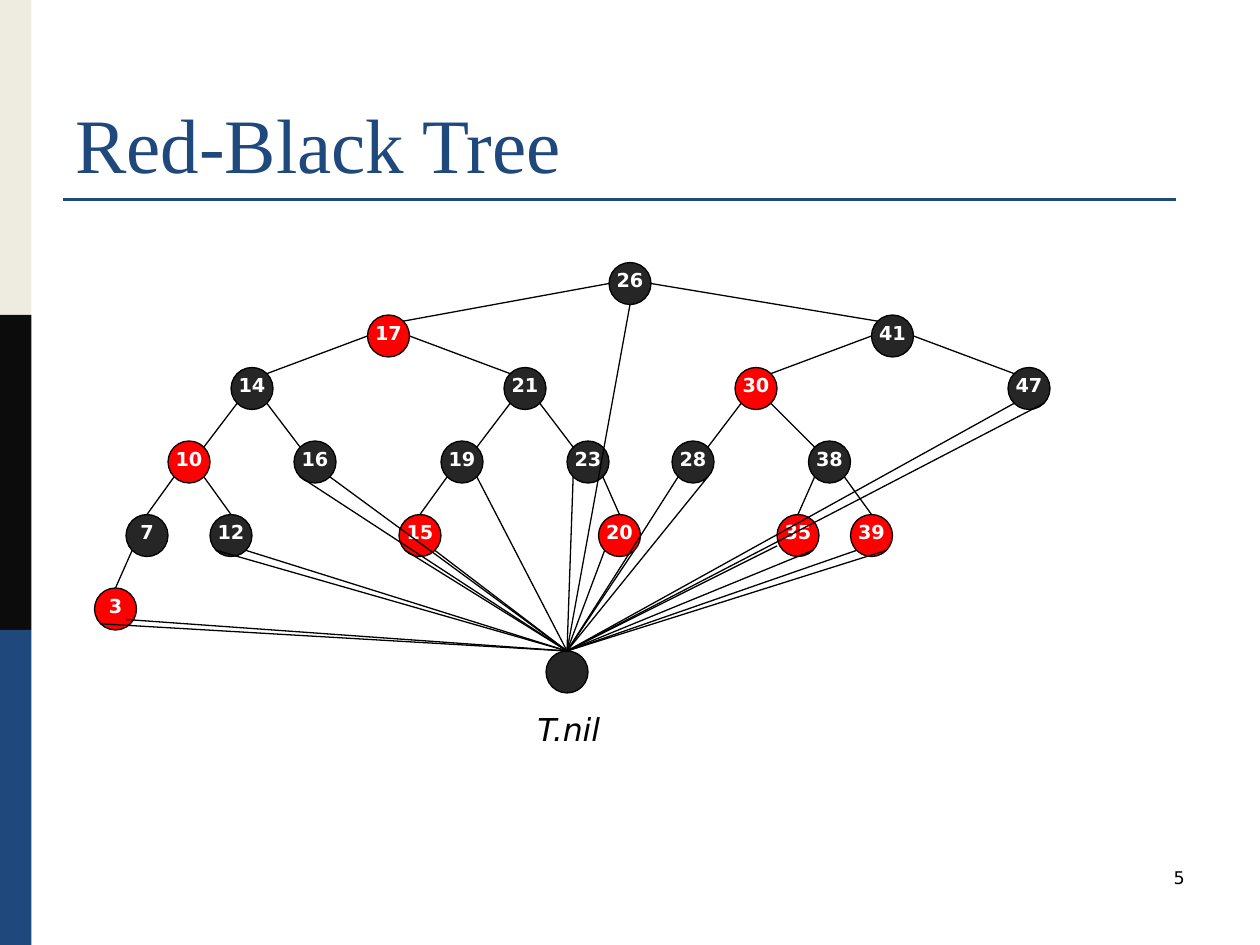
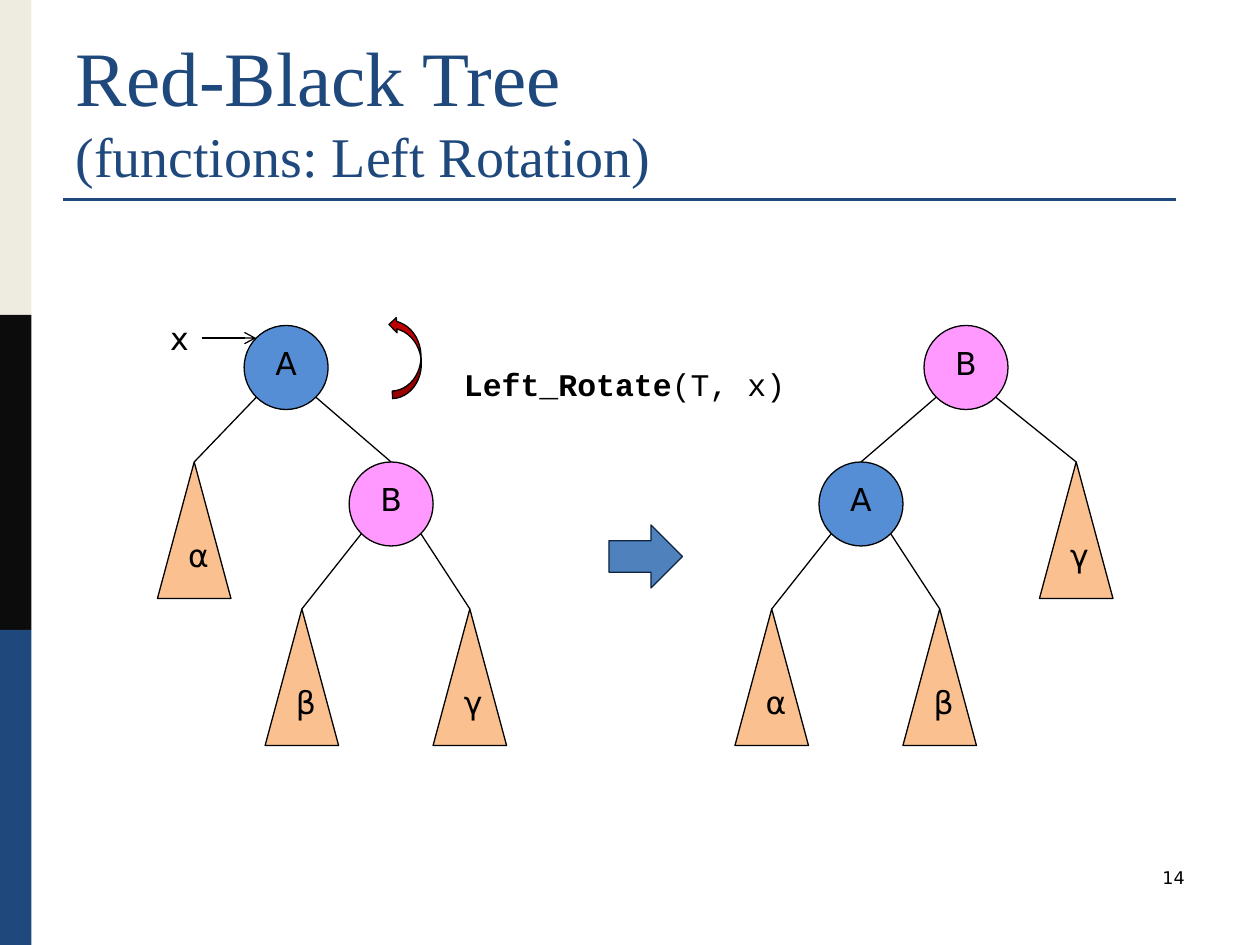
from dataclasses import dataclass

from lxml import etree
from pptx import Presentation
from pptx import util as u
from pptx.dml.color import RGBColor
from pptx.enum import shapes, text
from pptx.oxml.ns import qn

COLUMNS, ROWS = 120, 90
DIAGONAL = 0.707


@dataclass(frozen=True)
class Theme:
    """Colours, fonts and type sizes shared by the slides."""
    navy: str = "1F497D"
    cream: str = "EEECE1"
    ink: str = "0C0C0C"
    black: str = "000000"
    white: str = "FFFFFF"
    node_black: str = "262626"
    node_red: str = "FF0000"
    blue: str = "558ED5"
    pink: str = "FF99FF"
    peach: str = "FAC090"
    arrow: str = "4F81BD"
    arrow_edge: str = "0F243E"
    crimson: str = "C00000"
    serif: str = "Times New Roman"
    sans: str = "DejaVu Sans"
    mono: str = "Courier New"
    title: int = 44
    subtitle: int = 32
    body: int = 18
    key: int = 11
    page: int = 10
    thin: float = 0.75
    rule: float = 1.5


class Deck:
    """Draws styled elements on the current slide, measured in grid columns and rows."""

    def __init__(self, theme):
        self.theme = theme
        self.show = Presentation()
        self.show.slide_width, self.show.slide_height = u.Inches(10), u.Inches(7.5)
        self.slide = None

    def at(self, *lengths):
        """Turn alternating columns and rows into slide lengths."""
        units = self.show.slide_width / COLUMNS, self.show.slide_height / ROWS
        return [round(n * units[i % 2]) for i, n in enumerate(lengths)]

    def page(self, number, *headings):
        """Start a slide with its bands, rule, title and page number."""
        t = self.theme
        self.slide = self.show.slides.add_slide(self.show.slide_layouts[6])
        for band, color in enumerate((t.cream, t.ink, t.navy)):
            self.shape("RECTANGLE", (0, band * ROWS / 3, 3, ROWS / 3), color)
        self.line((6, 19), (112, 19), t.navy, t.rule)
        title = self.label((6, 3.6, 108, 15), headings[0], t.title, t.navy, t.serif)
        title.vertical_anchor = text.MSO_ANCHOR.BOTTOM
        for heading in headings[1:]:
            paragraph = title.add_paragraph()
            paragraph.text = heading
            self.style(paragraph, t.subtitle, t.navy, t.serif)
        self.label((86, 82, 28, 6), number, t.page, align="RIGHT")

    def style(self, paragraph, size, color=None, font=None, align="LEFT"):
        """Set the type of a whole paragraph."""
        paragraph.font.size = u.Pt(size)
        paragraph.font.name = font or self.theme.sans
        paragraph.font.color.rgb = RGBColor.from_string(color or self.theme.black)
        paragraph.alignment = getattr(text.PP_ALIGN, align)

    def label(self, box, words, size, color=None, font=None, align="LEFT", wrap=True):
        """Add free text and return its frame."""
        frame = self.slide.shapes.add_textbox(*self.at(*box)).text_frame
        frame.word_wrap = wrap
        frame.text = words
        self.style(frame.paragraphs[0], size, color, font, align)
        return frame

    def shape(self, preset, box, fill, edge=None):
        """Add a flat preset shape."""
        figure = self.slide.shapes.add_shape(getattr(shapes.MSO_SHAPE, preset), *self.at(*box))
        figure.shadow.inherit = False
        figure.fill.solid()
        figure.fill.fore_color.rgb = RGBColor.from_string(fill)
        if edge:
            figure.line.color.rgb = RGBColor.from_string(edge)
            figure.line.width = u.Pt(self.theme.thin)
        else:
            figure.line.fill.background()
        return figure

    def line(self, start, end, color=None, width=None, arrow=False):
        """Join two grid points."""
        edge = self.slide.shapes.add_connector(
            shapes.MSO_CONNECTOR.STRAIGHT, *self.at(*start, *end))
        edge.line.color.rgb = RGBColor.from_string(color or self.theme.black)
        edge.line.width = u.Pt(width or self.theme.thin)
        properties = edge._element.spPr
        if arrow:
            etree.SubElement(properties.find(qn("a:ln")), qn("a:tailEnd"), type="arrow")
        etree.SubElement(properties, qn("a:effectLst"))

    def inscribe(self, figure, words, size, color=None, align="CENTER"):
        """Write words at the top of a shape's text area."""
        frame = figure.text_frame
        frame.vertical_anchor = text.MSO_ANCHOR.TOP
        frame.text = words
        self.style(frame.paragraphs[0], size, color, align=align)
        return frame

    def key_node(self, center, key, red):
        """Add a numbered red or black node."""
        t = self.theme
        circle = self.shape("OVAL", (center[0] - 2, center[1] - 2, 4, 4),
                            t.node_red if red else t.node_black, t.black)
        if key:
            frame = self.inscribe(circle, key, t.key, t.white)
            frame.margin_left = frame.margin_right = 0
            frame.margin_top = frame.margin_bottom = 0
            frame.paragraphs[0].font.bold = True

    def pivot(self, center, name):
        """Add a large rotation node."""
        t = self.theme
        circle = self.shape("OVAL", (center[0] - 4, center[1] - 4, 8, 8),
                            t.blue if name == "A" else t.pink, t.black)
        self.inscribe(circle, name, t.body)

    def subtree(self, apex, name):
        """Add a triangle that stands for a subtree."""
        triangle = self.shape("ISOSCELES_TRIANGLE", (apex[0] - 3.5, apex[1], 7, 13),
                              self.theme.peach, self.theme.black)
        self.inscribe(triangle, name, self.theme.body, align="LEFT")


def rim(center, radius, side, down):
    """Give the diagonal point on a circle's rim."""
    return center[0] + side * radius * DIAGONAL, center[1] + down * radius * DIAGONAL


TREE = {
    26: (60, 27, 17, 41), 17: (37, 32, 14, 21), 41: (85, 32, 30, 47),
    14: (24, 37, 10, 16), 21: (50, 37, 19, 23), 30: (72, 37, 28, 38),
    47: (98, 37, None, None), 10: (18, 44, 7, 12), 16: (30, 44, None, None),
    19: (44, 44, 15, None), 23: (56, 44, None, 20), 28: (66, 44, None, None),
    38: (79, 44, 35, 39), 7: (14, 51, 3, None), 12: (22, 51, None, None),
    15: (40, 51, None, None), 20: (59, 51, None, None), 35: (76, 51, None, None),
    39: (83, 51, None, None), 3: (11, 58, None, None),
}
RED_KEYS = {17, 30, 10, 35, 39, 15, 20, 3}
UNLINKED = {(7, 1)}
NIL_STARTS = {(35, -1): (74, 52), (3, 1): (12, 59)}


def red_black_tree(deck):
    """Draw the tree with every missing child joined to T.nil."""
    deck.page("5", "Red-Black Tree")
    nil = 54, 64
    nil_top = nil[0], nil[1] - 2
    for key, (col, row, *_) in TREE.items():
        deck.key_node((col, row), str(key), key in RED_KEYS)
    deck.key_node(nil, "", False)
    for key, (col, row, *children) in TREE.items():
        for side, child in zip((-1, 1), children):
            start = rim((col, row), 2, side, 1)
            if child:
                x, y = TREE[child][:2]
                end = rim((x, y), 2, -side, -1) if y < 51 else (x, y - 2)
                deck.line((col + 2 * side, row) if row < 37 else start, end)
            elif (key, side) not in UNLINKED:
                deck.line(NIL_STARTS.get((key, side), start), nil_top)
    root_col, root_row = TREE[26][:2]
    deck.line((root_col, root_row + 2), nil_top)
    caption = deck.label((50, 67, 12, 5), "T.nil", deck.theme.body)
    caption.paragraphs[0].font.italic = True


def rotation_tree(deck, root, inner, subtrees, inner_side):
    """Draw two pivots with an outer subtree and two inner ones."""
    (root_name, root_at), (inner_name, inner_at) = root, inner
    (outer, outer_col), (left, left_col), (right, right_col) = subtrees
    deck.pivot(root_at, root_name)
    deck.pivot(inner_at, inner_name)
    links = ((root_at, inner_side, (inner_at[0], 44), None),
             (root_at, -inner_side, (outer_col, 44), outer),
             (inner_at, -1, (left_col, 58), left),
             (inner_at, 1, (right_col, 58), right))
    for parent, side, top, name in links:
        if name:
            deck.subtree(top, name)
        deck.line(rim(parent, 4, side, 1), top)


def left_rotation(deck):
    """Draw the tree before and after a left rotation."""
    t = deck.theme
    deck.page("14", "Red-Black Tree", "(functions: Left Rotation)")
    rotation_tree(deck, ("B", (92, 35)), ("A", (82, 48)),
                  (("γ", 102.5), ("α", 73.5), ("β", 89.5)), -1)
    rotation_tree(deck, ("A", (27.25, 35)), ("B", (37.25, 48)),
                  (("α", 18.5), ("β", 28.75), ("γ", 44.75)), 1)
    call = deck.label((43, 34.2, 36, 4.8), "", t.body, font=t.mono).paragraphs[0]
    for words, bold in (("Left_Rotate", True), ("(T, x)", False)):
        run = call.add_run()
        run.text, run.font.bold = words, bold
    deck.shape("RIGHT_ARROW", (58, 50, 7, 6), t.arrow, t.arrow_edge)
    deck.label((15, 29.8, 4.2, 4.8), "x", t.body, align="CENTER", wrap=False)
    turn = deck.shape("CURVED_RIGHT_ARROW", (37.2, 30.1, 2.9, 7.8), t.crimson, t.black)
    turn.rotation = 177.2
    deck.line((19.2, 32.2), (24.4, 32.2), arrow=True)


def main():
    """Build and save both slides."""
    deck = Deck(Theme())
    red_black_tree(deck)
    left_rotation(deck)
    deck.show.save("out.pptx")


if __name__ == "__main__":
    main()
